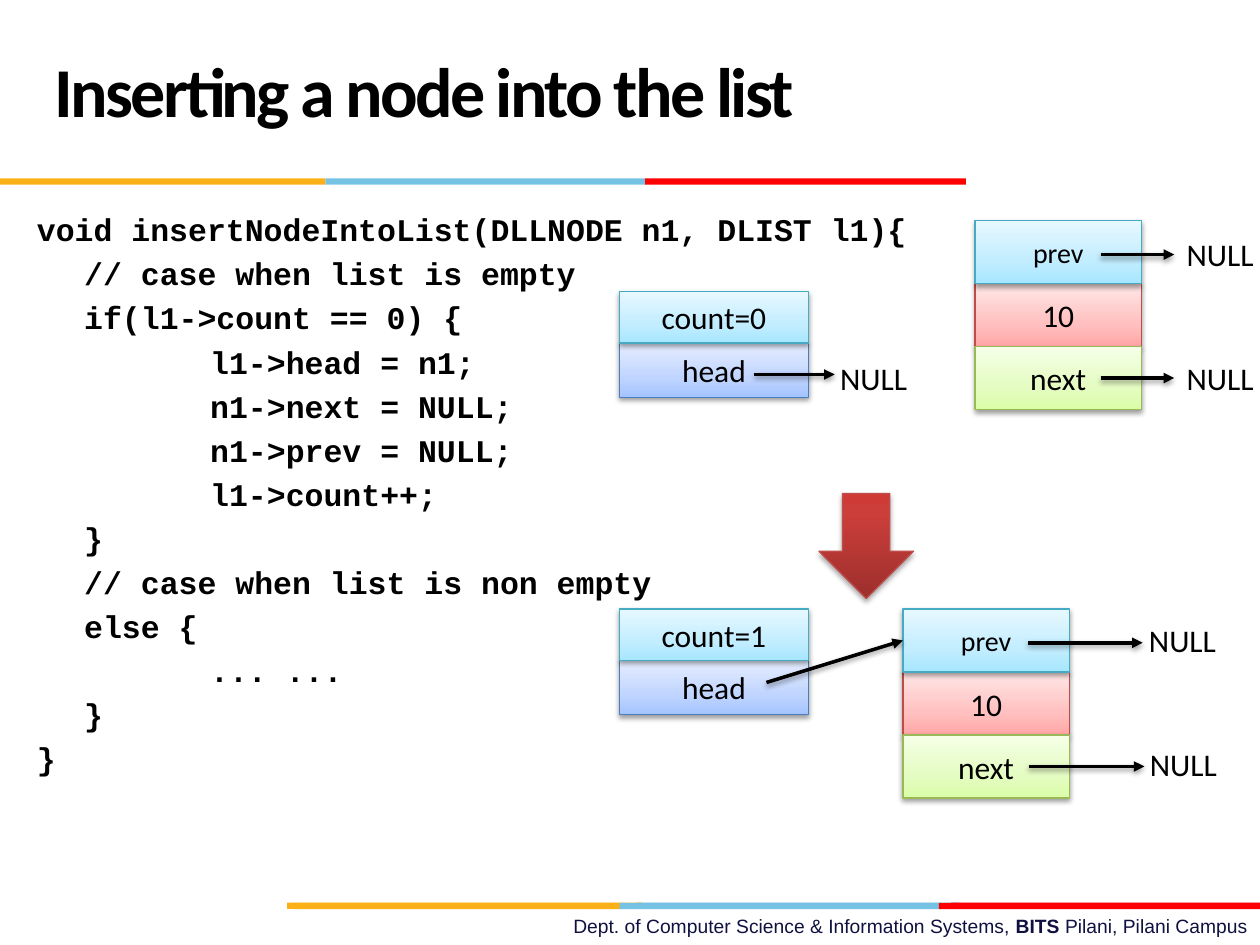
from pptx import Presentation
from pptx.enum.shapes import MSO_CONNECTOR, MSO_SHAPE
from pptx.enum.text import MSO_ANCHOR, PP_ALIGN
from pptx.dml.color import RGBColor
from pptx.oxml import parse_xml
from pptx.oxml.ns import nsdecls
from pptx.util import Pt

COLORS = {
    "ink": "000000", "footer": "101141",
    "amber": "FCB017", "sky": "76C2E5", "red": "FF0000", "crimson": "E31C24",
    "link_low": "A7E6FF", "link_mid": "C1EDFF", "link_high": "E7F8FF", "link_line": "46AAC5",
    "data_low": "FFA6A5", "data_mid": "FFC0BF", "data_high": "FFE7E7", "data_line": "BF4C48",
    "next_low": "DAFDA7", "next_mid": "E4FCC2", "next_high": "F5FFE7", "next_line": "98B955",
    "head_low": "A4C4FF", "head_mid": "BFD4FF", "head_high": "E6EEFF", "head_line": "4B7EBC",
    "step_low": "9C2F2D", "step_mid": "CB3E3A", "step_high": "CE3B37", "step_line": "BF4C48",
}
STRIPES = [
    ("sky", 364, 515.8, 184), ("crimson", 543.5, 515.8, 176.5), ("amber", 164, 515.8, 203),
    ("sky", 354, 516, 183.5), ("amber", 168, 516, 186), ("red", 536.5, 516, 183.5),
    ("sky", 186, 102, 183), ("amber", 0, 102, 186), ("red", 368.7, 102, 183.3),
]
CODE_INDENTS = (0, 27, 99)
CODE = [
    (0, "void insertNodeIntoList(DLLNODE n1, DLIST l1){"),
    (1, "// case when list is empty"),
    (1, "if(l1->count == 0) {"),
    (2, "l1->head = n1;"),
    (2, "n1->next = NULL;"),
    (2, "n1->prev = NULL;"),
    (2, "l1->count++;"),
    (1, "}"),
    (1, "// case when list is non empty"),
    (1, "else {"),
    (2, "... ..."),
    (1, "}"),
    (0, "}"),
]


def color(name):
    return RGBColor.from_string(COLORS[name])


class ListSlide:
    font = "Calibri"
    size = 18
    ink = "ink"

    def __init__(self, slide):
        self.slide = slide
        self.shapes = slide.shapes

    def style(self, run, size=None, font=None, ink=None, bold=False):
        run.font.size = Pt(size or self.size)
        run.font.name = font or self.font
        run.font.color.rgb = color(ink or self.ink)
        run.font.bold = bold

    def shadow(self, alpha=38, distance=1.6):
        return parse_xml(
            f'<a:outerShdw {nsdecls("a")} blurRad="{Pt(3.1)}" dist="{Pt(distance)}" '
            f'dir="5400000" rotWithShape="0"><a:srgbClr val="{COLORS["ink"]}">'
            f'<a:alpha val="{alpha * 1000}"/></a:srgbClr></a:outerShdw>')

    def stripe(self, hue, left, top, width):
        bar = self.shapes.add_shape(MSO_SHAPE.RECTANGLE, Pt(left), Pt(top), Pt(width), Pt(3.6))
        bar.shadow.inherit = False
        bar.fill.solid()
        bar.fill.fore_color.rgb = color(hue)
        bar.line.fill.background()

    def block(self, family, left, top, width, height, preset=MSO_SHAPE.RECTANGLE,
              middle=35, shadow=None):
        block = self.shapes.add_shape(preset, Pt(left), Pt(top), Pt(width), Pt(height))
        stops = "".join(
            f'<a:gs pos="{place * 1000}"><a:srgbClr val="{COLORS[family + tone]}"/></a:gs>'
            for place, tone in ((0, "_low"), (middle, "_mid"), (100, "_high")))
        block.fill.background()
        fill = block._element.spPr.find("{*}noFill")
        fill.getparent().replace(fill, parse_xml(
            f'<a:gradFill {nsdecls("a")} rotWithShape="1"><a:gsLst>{stops}</a:gsLst>'
            '<a:lin ang="16200000" scaled="0"/></a:gradFill>'))
        block.line.color.rgb = color(family + "_line")
        block.line.width = Pt(0.75)
        block.shadow.inherit = False
        effects = block._element.spPr.find("{*}effectLst")
        effects.append(self.shadow() if shadow is None else shadow)
        return block

    def cell(self, family, label, left, top, width, height, size=None):
        cell = self.block(family, left, top, width, height)
        cell.text_frame.text = label
        cell.text_frame.vertical_anchor = MSO_ANCHOR.MIDDLE
        paragraph = cell.text_frame.paragraphs[0]
        paragraph.alignment = PP_ALIGN.CENTER
        self.style(paragraph.runs[0], size)
        return cell

    def node(self, left, top):
        width, height = 95, 36
        self.cell("data", "10", left, top + height, width, height)
        self.cell("next", "next", left, top + 2 * height, width, height)
        return self.cell("link", "prev", left, top, width, height, size=16)

    def list_header(self, count, top):
        self.cell("head", "head", 354, top + 29.3, 108, 31)
        self.cell("link", f"count={count}", 354, top, 108, 29.3)

    def text(self, lines, left, top, width, height):
        frame = self.shapes.add_textbox(Pt(left), Pt(top), Pt(width), Pt(height)).text_frame
        frame.word_wrap = True
        frame.text = "\n".join(lines)
        return frame

    def arrow(self, start, end, target=None):
        arrow = self.shapes.add_connector(
            MSO_CONNECTOR.STRAIGHT, *(Pt(value) for value in (*start, *end)))
        if target is not None:
            arrow.end_connect(target, 1)
        arrow.line.color.rgb = color(self.ink)
        arrow.line.width = Pt(2)
        arrow.line._ln.append(parse_xml(f'<a:tailEnd {nsdecls("a")} type="triangle"/>'))
        effects = parse_xml(f'<a:effectLst {nsdecls("a")}/>')
        effects.append(self.shadow())
        arrow._element.spPr.append(effects)

    def null_pointer(self, start, end, level, label_left, label_top):
        self.arrow((start, level), (end, level))
        label = self.text(["NULL"], label_left, label_top, 55.5, 29)
        self.style(label.paragraphs[0].runs[0])

    def title(self, words):
        frame = self.text([words], 24, 12, 498, 90)
        frame.vertical_anchor = MSO_ANCHOR.MIDDLE
        paragraph = frame.paragraphs[0]
        paragraph.line_spacing = Pt(36)
        self.style(paragraph.runs[0], 40, bold=True)
        paragraph.runs[0]._r.get_or_add_rPr().set("spc", "-150")

    def code(self, lines):
        frame = self.text([line for _, line in lines], 14, 116.6, 694, 363.6)
        for row, (paragraph, (depth, _)) in enumerate(zip(frame.paragraphs, lines)):
            properties = paragraph._p.get_or_add_pPr()
            properties.set("marL", str(Pt(CODE_INDENTS[depth])))
            properties.set("indent", "0")
            paragraph.space_before = Pt(3.6 if row else 0)
            self.style(paragraph.runs[0], font="Courier New", bold=True)

    def footer(self, parts):
        paragraph = self.text([""], 0, 519, 720, 21).paragraphs[0]
        paragraph.alignment = PP_ALIGN.RIGHT
        for words, bold in parts:
            run = paragraph.add_run()
            run.text = words
            self.style(run, 11, "Arial", "footer", bold)


def main():
    deck = Presentation()
    deck.slide_width, deck.slide_height = Pt(720), Pt(540)
    page = ListSlide(deck.slides.add_slide(deck.slide_layouts[6]))

    for stripe in STRIPES:
        page.stripe(*stripe)
    page.footer([("Dept. of Computer Science & Information Systems, ", False),
                 ("BITS ", True), ("Pilani, Pilani Campus", False)])
    page.title("Inserting a node into the list")
    page.code(CODE)

    page.list_header(0, 166.7)
    page.node(557.2, 126)
    page.null_pointer(431, 477, 214, 473, 201.6)
    page.null_pointer(629, 671, 145.5, 671, 131)
    page.null_pointer(629, 671, 216, 671, 201.6)

    page.block("step", 468, 282, 54, 60, MSO_SHAPE.DOWN_ARROW, 80, page.shadow(35, 1.8))

    page.list_header(1, 348)
    inserted_prev = page.node(516, 348)
    page.arrow((438, 390), (516, 366), inserted_prev)
    page.null_pointer(587.5, 653, 367.3, 649.5, 351.4)
    page.null_pointer(588, 654, 438, 650, 422)

    deck.save("out.pptx")


if __name__ == "__main__":
    main()
